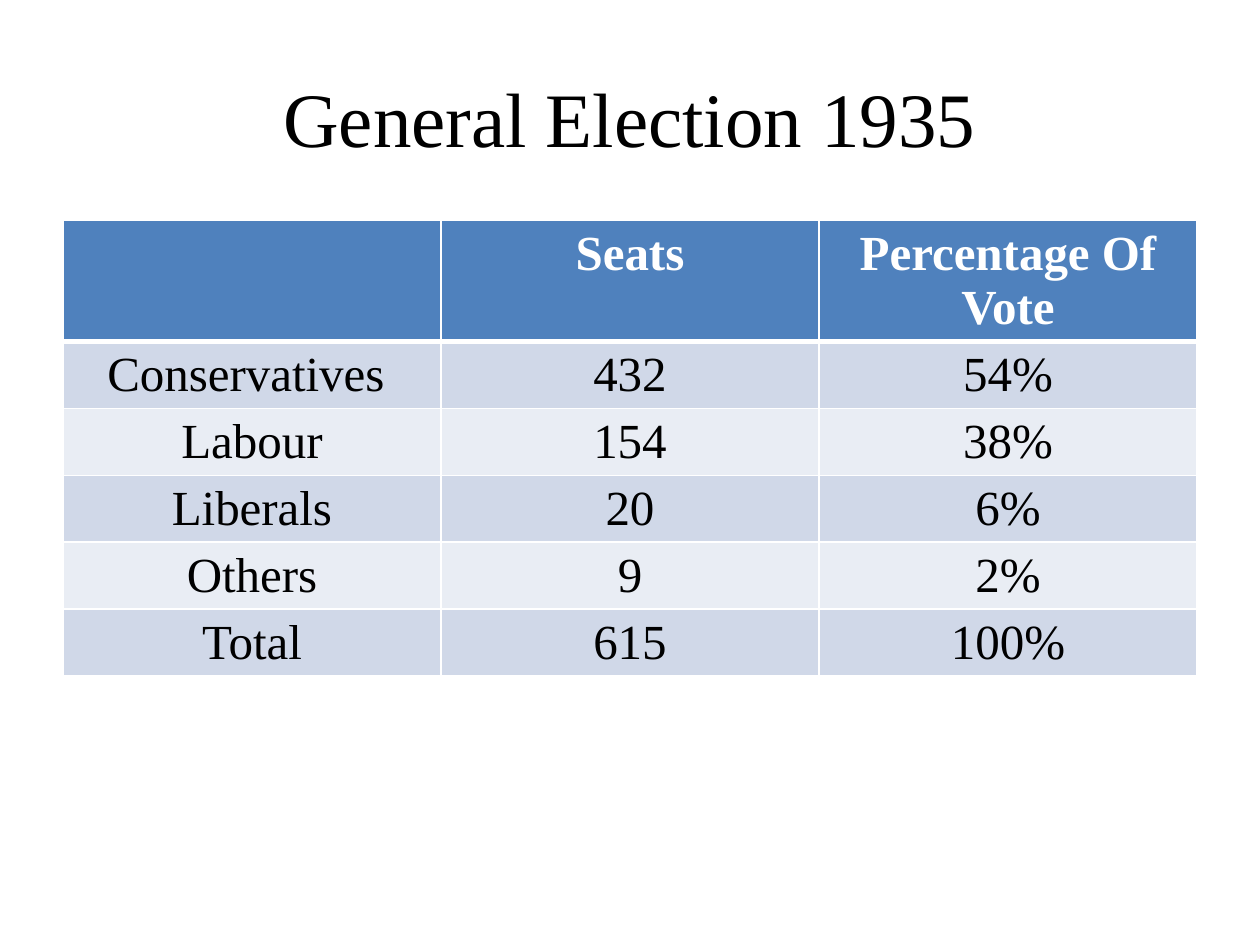
"""Build the General Election 1935 results slide."""
from dataclasses import dataclass

from lxml.etree import SubElement
from pptx import Presentation
from pptx.dml.color import RGBColor
from pptx.enum.text import MSO_ANCHOR, PP_ALIGN
from pptx.oxml.ns import qn
from pptx.util import Pt

PX = 9144
FONT = "Times New Roman"
RESULTS = [
    ("", "Seats", "Percentage Of Vote"),
    ("Conservatives ", "432", "54%"),
    ("Labour", "154", "38%"),
    ("Liberals", "20", "6%"),
    ("Others", "9", "2%"),
    ("Total", "615", "100%"),
]


@dataclass(frozen=True)
class RowStyle:
    """Look of one table row, with its height in px and rules in points."""
    fill: str
    color: str
    bold: bool
    height: int
    top: int
    bottom: int


HEADER = RowStyle("4F81BD", "FFFFFF", True, 96, 1, 3)
FIRST = RowStyle("D0D8E8", "000000", False, 53, 3, 1)
DARK = RowStyle("D0D8E8", "000000", False, 53, 1, 1)
LIGHT = RowStyle("E9EDF4", "000000", False, 53, 1, 1)


def rgb(value: str) -> RGBColor:
    """Turn a hex string into a colour."""
    return RGBColor.from_string(value)


def format_text(tf, size: int, color: str, bold: bool = False) -> None:
    """Centre the text and set its font."""
    for p in tf.paragraphs:
        p.alignment = PP_ALIGN.CENTER
        for r in p.runs:
            r.font.name = FONT
            r.font.size = Pt(size)
            r.font.bold = bold
            r.font.color.rgb = rgb(color)


def add_borders(cell, top: int, bottom: int) -> None:
    """Give a cell white rules on all four sides."""
    tc_pr = cell._tc.get_or_add_tcPr()
    sides = (("a:lnL", 1), ("a:lnR", 1), ("a:lnT", top), ("a:lnB", bottom))
    for tag, width in sides:
        ln = SubElement(tc_pr, qn(tag), w=str(Pt(width)))
        fill = SubElement(ln, qn("a:solidFill"))
        SubElement(fill, qn("a:srgbClr"), val="FFFFFF")


def row_style(index: int) -> RowStyle:
    """Choose the style for a row of the table."""
    if index < 2:
        return (HEADER, FIRST)[index]
    return DARK if index % 2 else LIGHT


def draw_cell(cell, text: str, style: RowStyle) -> None:
    """Fill one table cell."""
    add_borders(cell, style.top, style.bottom)
    cell.fill.solid()
    cell.fill.fore_color.rgb = rgb(style.fill)
    cell.text_frame.text = text
    format_text(cell.text_frame, 28, style.color, style.bold)


def draw_title(s, text: str) -> None:
    """Place the slide title."""
    sp = s.shapes.title
    sp.left, sp.top, sp.width, sp.height = (v * PX for v in (50, 30, 900, 125))
    tf = sp.text_frame
    tf.text = text
    tf.vertical_anchor = MSO_ANCHOR.MIDDLE
    format_text(tf, 44, "000000")


def draw_table(s, rows: list[tuple[str, ...]]) -> None:
    """Draw the results table."""
    styles = [row_style(i) for i in range(len(rows))]
    height = sum(style.height for style in styles)
    table = s.shapes.add_table(
        len(rows), len(rows[0]), 50 * PX, 175 * PX, 900 * PX, height * PX
    ).table
    for row, values, style in zip(table.rows, rows, styles):
        row.height = style.height * PX
        for cell, text in zip(row.cells, values):
            draw_cell(cell, text, style)


def main() -> None:
    """Build and save the presentation."""
    prs = Presentation()
    prs.slide_width, prs.slide_height = 1000 * PX, 750 * PX
    s = prs.slides.add_slide(prs.slide_layouts[5])
    draw_title(s, "General Election 1935")
    draw_table(s, RESULTS)
    prs.save("out.pptx")


if __name__ == "__main__":
    main()
